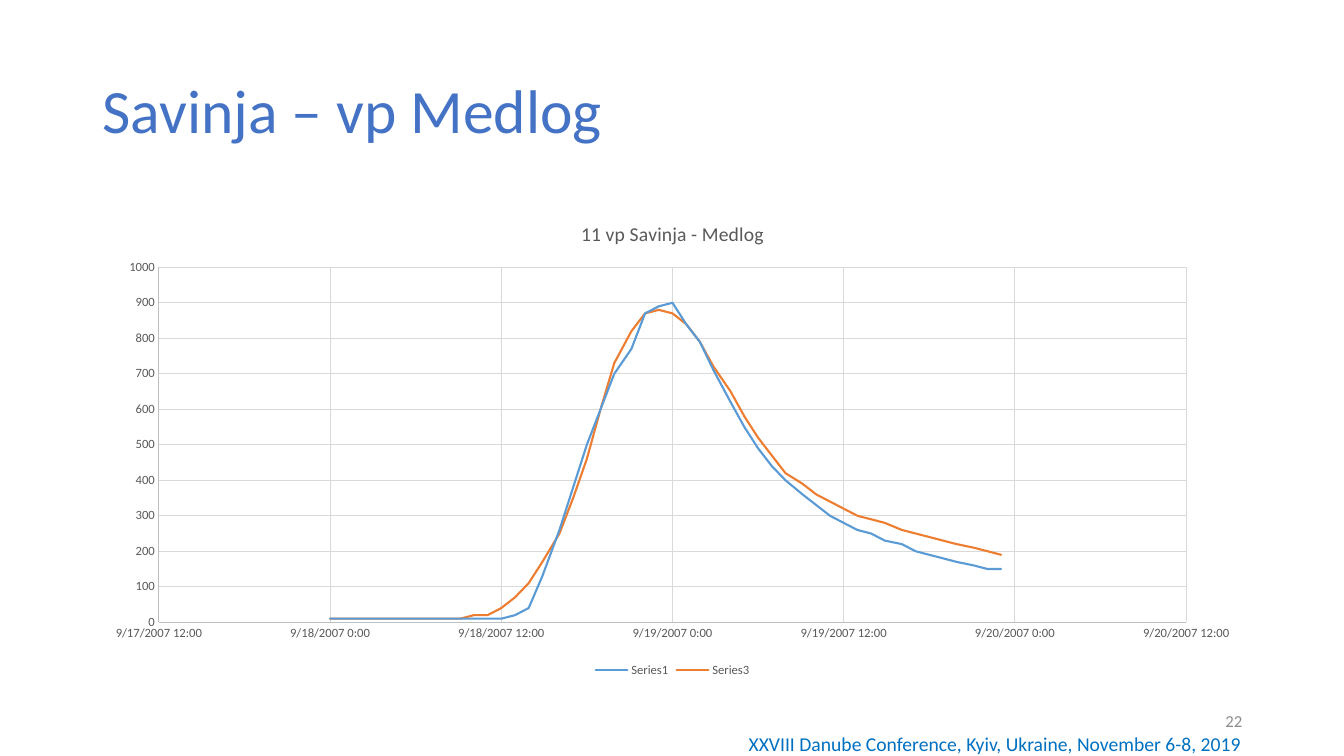
from lxml.etree import SubElement
from pptx import Presentation
from pptx.chart.data import XyChartData
from pptx.dml.color import RGBColor
from pptx.enum.chart import XL_CHART_TYPE as ChartType, XL_LEGEND_POSITION as LegendPos
from pptx.enum.chart import XL_TICK_MARK as TickMark
from pptx.enum.text import MSO_ANCHOR as Anchor, PP_ALIGN as Align
from pptx.oxml.ns import qn
from pptx.util import Inches, Pt

TITLE_BLUE = RGBColor(0x44, 0x72, 0xC4)
FOOTER_BLUE = RGBColor(0x00, 0x70, 0xC0)
NUMBER_GRAY = RGBColor(0x8C, 0x8C, 0x8C)
LABEL_GRAY = RGBColor(0x59, 0x59, 0x59)
AXIS_GRAY = RGBColor(0xBF, 0xBF, 0xBF)
GRID_GRAY = RGBColor(0xD9, 0xD9, 0xD9)
SERIES_BLUE = RGBColor(0x5B, 0x9B, 0xD5)
SERIES_ORANGE = RGBColor(0xED, 0x7D, 0x31)
FONT = "Calibri"


def style_font(font, size, color):
    font.name = FONT
    font.size = Pt(size)
    font.bold = False
    font.color.rgb = color


def add_text(slide, box, text, size, color, align, anchor):
    frame = slide.shapes.add_textbox(*[Inches(v) for v in box]).text_frame
    frame.word_wrap = True
    frame.vertical_anchor = anchor
    frame.text = text
    paragraph = frame.paragraphs[0]
    paragraph.alignment = align
    style_font(paragraph.runs[0].font, size, color)
    return paragraph


prs = Presentation()
prs.slide_width, prs.slide_height = Inches(13.33), Inches(7.5)
slide = prs.slides.add_slide(prs.slide_layouts[6])

# Title and page number
heading = add_text(slide, (0.92, 0.4, 11.5, 1.45), "Savinja – vp Medlog",
                   44, TITLE_BLUE, Align.LEFT, Anchor.MIDDLE)
heading.line_spacing = 0.9
add_text(slide, (9.42, 6.95, 3, 0.4), "22", 12, NUMBER_GRAY, Align.RIGHT, Anchor.MIDDLE)

# Hourly discharge, starting at 9/18/2007 0:00 (as a date serial)
START = 39343
discharges = {
    "Series1": [10, 10, 10, 10, 10, 10, 10, 10, 10, 10, 10, 10,
                10, 20, 40, 130, 260, 380, 500, 600, 700, 770, 870, 890,
                900, 840, 790, 710, 620, 550, 490, 440, 400, 360, 330, 300,
                280, 260, 250, 230, 220, 200, 190, 180, 170, 160, 150, 150],
    "Series3": [10, 10, 10, 10, 10, 10, 10, 10, 10, 10, 20, 20,
                40, 70, 110, 170, 250, 350, 460, 600, 730, 820, 870, 880,
                870, 840, 790, 720, 650, 580, 520, 470, 420, 390, 360, 340,
                320, 300, 290, 280, 260, 250, 240, 230, 220, 210, 200, 190],
}
chart_data = XyChartData()
for name, flows in discharges.items():
    points = chart_data.add_series(name)
    for hour, flow in enumerate(flows):
        points.add_data_point(round(START + hour / 24, 2), flow)

# Hydrograph
hydrograph = slide.shapes.add_chart(
    ChartType.XY_SCATTER_LINES_NO_MARKERS, Inches(0.92), Inches(2),
    Inches(11.5), Inches(4.76), chart_data).chart
style_font(hydrograph.font, 10, LABEL_GRAY)
hydrograph.has_title = True
chart_title = hydrograph.chart_title.text_frame
chart_title.text = "11 vp Savinja - Medlog"
style_font(chart_title.paragraphs[0].runs[0].font, 14, LABEL_GRAY)
hydrograph.chart_title.include_in_layout = False

hydrograph.has_legend = True
hydrograph.legend.position = LegendPos.BOTTOM
hydrograph.legend.include_in_layout = False
style_font(hydrograph.legend.font, 9, LABEL_GRAY)

for series, color in zip(hydrograph.plots[0].series, (SERIES_BLUE, SERIES_ORANGE)):
    series.smooth = False
    series.format.line.color.rgb = color
    series.format.line.width = Pt(1.5)
    series._element.find(f"{qn('c:spPr')}/{qn('a:ln')}").set("cap", "rnd")

# Axes
for axis, low, high, step, number_format in (
        (hydrograph.category_axis, START - 0.5, START + 2.5, 0.5, "m/d/yyyy h:mm"),
        (hydrograph.value_axis, 0, 1000, 100, "General")):
    axis.minimum_scale, axis.maximum_scale, axis.major_unit = low, high, step
    axis.major_tick_mark = axis.minor_tick_mark = TickMark.NONE
    axis.tick_labels.number_format = number_format
    axis.tick_labels.number_format_is_linked = False
    style_font(axis.tick_labels.font, 9, LABEL_GRAY)
    axis.has_major_gridlines = True
    for line, color in ((axis.format.line, AXIS_GRAY),
                        (axis.major_gridlines.format.line, GRID_GRAY)):
        line.color.rgb = color
        line.width = Pt(0.75)

# Plot area position, as fractions of the chart
plot_area = hydrograph.plots[0]._element.getparent()
for old_layout in plot_area.findall(qn("c:layout")):
    plot_area.remove(old_layout)
layout = SubElement(plot_area, qn("c:layout"))
plot_area.insert(0, layout)
manual = SubElement(layout, qn("c:manualLayout"))
for tag, value in (("layoutTarget", "inner"), ("xMode", "edge"), ("yMode", "edge"),
                   ("x", "0.057"), ("y", "0.137"), ("w", "0.886"), ("h", "0.74")):
    SubElement(manual, qn(f"c:{tag}")).set("val", value)

# Conference footer
add_text(slide, (7.26, 7.21, 5.15, 0.57),
         "XXVIII Danube Conference, Kyiv, Ukraine, November 6-8, 2019",
         14, FOOTER_BLUE, Align.RIGHT, Anchor.TOP)

prs.save("out.pptx")
